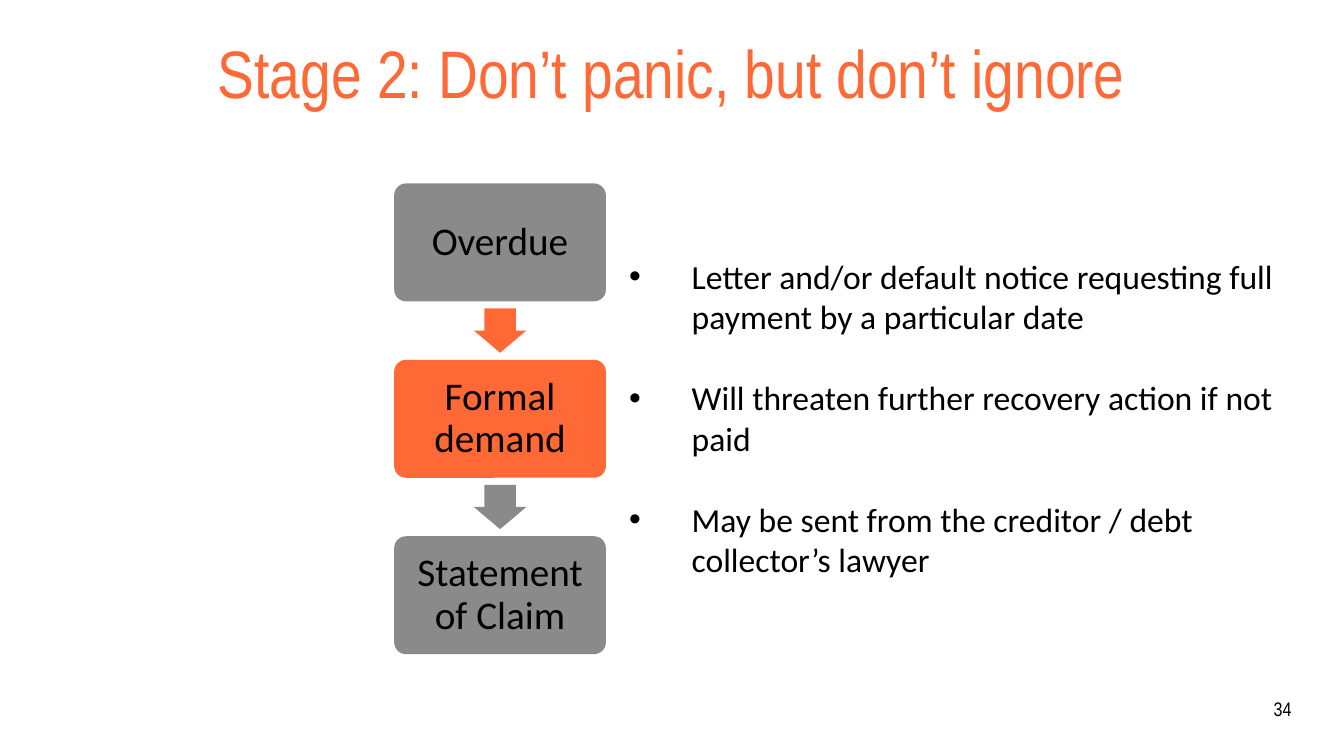
from lxml import etree
from pptx import Presentation
from pptx.dml.color import RGBColor
from pptx.enum import shapes, text
from pptx.oxml.ns import qn
from pptx.util import Inches, Pt

COLORS = {"orange": "FF6936", "grey": "898A89", "black": "000000"}
TITLE = "Stage 2: Don’t panic, but don’t ignore"
PAGE_NUMBER = "34"
STAGES = [("Overdue", "grey"), ("Formal demand", "orange"), ("Statement of Claim", "grey")]
ARROW_COLORS = ["orange", "grey"]
POINTS = [
    "Letter and/or default notice requesting full payment by a particular date",
    "Will threaten further recovery action if not paid",
    "May be sent from the creditor / debt collector’s lawyer",
]

STAGE_LEFT, STAGE_TOP, STAGE_WIDTH, STAGE_HEIGHT = 3.91, 1.82, 2.1, 1.17
STAGE_PITCH = 1.75
ARROW_WIDTH, ARROW_HEIGHT = 0.52, 0.44


def place(shape, left, top, width, height):
    shape.left, shape.top = Inches(left), Inches(top)
    shape.width, shape.height = Inches(width), Inches(height)


def set_up_frame(frame, inset, anchor):
    frame.word_wrap = True
    frame.auto_size = text.MSO_AUTO_SIZE.NONE
    frame.vertical_anchor = anchor
    frame.margin_left = frame.margin_right = Inches(inset)
    frame.margin_top = frame.margin_bottom = Inches(inset)


def format_paragraph(paragraph, font_name, size, color, alignment, line_spacing=1.0):
    paragraph.alignment = alignment
    paragraph.line_spacing = line_spacing
    paragraph.space_before = Pt(0)
    for run in paragraph.runs:
        run.font.name = font_name
        run.font.size = Pt(size)
        run.font.color.rgb = RGBColor.from_string(COLORS[color])


def add_filled_shape(slide, kind, box, color, adjustments):
    shape = slide.shapes.add_shape(kind, *map(Inches, box))
    shape.shadow.inherit = False
    shape.fill.solid()
    shape.fill.fore_color.rgb = RGBColor.from_string(COLORS[color])
    shape.line.fill.background()
    for index, value in enumerate(adjustments):
        shape.adjustments[index] = value
    return shape


def add_hanging_bullet(paragraph, indent):
    properties = paragraph._p.get_or_add_pPr()
    properties.set("marL", str(Inches(indent)))
    properties.set("indent", str(-Inches(indent)))
    etree.SubElement(properties, qn("a:buFont")).set("typeface", "Arial")
    etree.SubElement(properties, qn("a:buChar")).set("char", "•")


def add_stages(slide):
    for index, (label, color) in enumerate(STAGES):
        top = STAGE_TOP + index * STAGE_PITCH
        stage = add_filled_shape(
            slide, shapes.MSO_SHAPE.ROUNDED_RECTANGLE,
            (STAGE_LEFT, top, STAGE_WIDTH, STAGE_HEIGHT), color, [0.1])
        set_up_frame(stage.text_frame, 0.12, text.MSO_ANCHOR.MIDDLE)
        stage.text_frame.text = label
        format_paragraph(stage.text_frame.paragraphs[0], "Calibri", 28, "black",
                         text.PP_ALIGN.CENTER, 0.9)

    gap = STAGE_PITCH - STAGE_HEIGHT
    arrow_left = STAGE_LEFT + (STAGE_WIDTH - ARROW_WIDTH) / 2
    for index, color in enumerate(ARROW_COLORS):
        top = STAGE_TOP + index * STAGE_PITCH + STAGE_HEIGHT + (gap - ARROW_HEIGHT) / 2
        add_filled_shape(slide, shapes.MSO_SHAPE.DOWN_ARROW,
                         (arrow_left, top, ARROW_WIDTH, ARROW_HEIGHT), color, [0.6, 0.5])


def main():
    presentation = Presentation()
    presentation.slide_width, presentation.slide_height = Inches(13.33), Inches(7.5)
    slide = presentation.slides.add_slide(presentation.slide_layouts[1])

    title, body = slide.shapes.title, slide.placeholders[1]
    place(title, 0.52, 0.4, 12.28, 0.73)
    set_up_frame(title.text_frame, 0, text.MSO_ANCHOR.TOP)
    title.text_frame.text = TITLE
    format_paragraph(title.text_frame.paragraphs[0], "Arial Narrow", 48, "orange",
                     text.PP_ALIGN.CENTER, 0.9)

    add_stages(slide)

    place(body, 6.14, 2.49, 6.67, 3.33)
    set_up_frame(body.text_frame, 0.1, text.MSO_ANCHOR.TOP)
    body.text_frame.margin_top = body.text_frame.margin_bottom = Inches(0.05)
    body.text_frame.text = "\n".join(POINTS)
    for index, paragraph in enumerate(body.text_frame.paragraphs):
        add_hanging_bullet(paragraph, 0.62)
        format_paragraph(paragraph, "Calibri", 24, "black", text.PP_ALIGN.LEFT)
        if index:
            paragraph.space_before = Pt(29)

    page_number = slide.shapes.add_textbox(*map(Inches, (12.42, 6.91, 0.39, 0.24)))
    set_up_frame(page_number.text_frame, 0, text.MSO_ANCHOR.BOTTOM)
    page_number.text_frame.text = PAGE_NUMBER
    format_paragraph(page_number.text_frame.paragraphs[0], "Arial Narrow", 14, "black",
                     text.PP_ALIGN.RIGHT)

    presentation.save("out.pptx")


if __name__ == "__main__":
    main()
